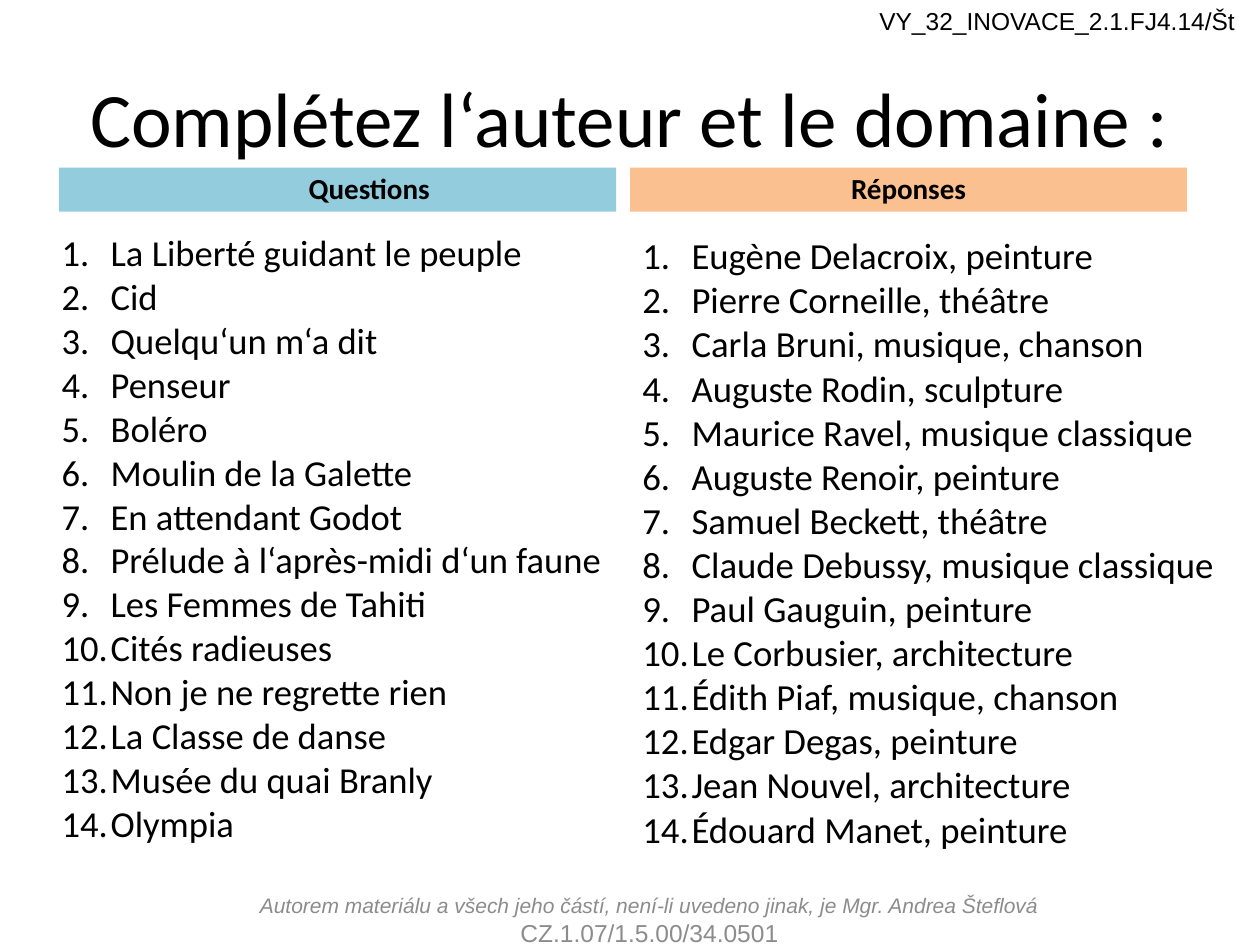
from lxml import etree
from pptx import Presentation, util as u
from pptx.dml.color import RGBColor
from pptx.enum import shapes, text
from pptx.oxml.ns import qn

BLACK = RGBColor(0x00, 0x00, 0x00)
GREY = RGBColor(0x8C, 0x8C, 0x8C)
BLUE = RGBColor(0x93, 0xCD, 0xDD)
ORANGE = RGBColor(0xFA, 0xC0, 0x90)
CENTER, LEFT = text.PP_ALIGN.CENTER, text.PP_ALIGN.LEFT
TOP, MIDDLE, BOTTOM = (text.MSO_ANCHOR.TOP, text.MSO_ANCHOR.MIDDLE,
                       text.MSO_ANCHOR.BOTTOM)

QUESTIONS = [
    "La Liberté guidant le peuple", "Cid", "Quelqu‘un m‘a dit", "Penseur",
    "Boléro", "Moulin de la Galette", "En attendant Godot",
    "Prélude à l‘après-midi d‘un faune", "Les Femmes de Tahiti",
    "Cités radieuses", "Non je ne regrette rien", "La Classe de danse",
    "Musée du quai Branly", "Olympia",
]
ANSWERS = [
    "Eugène Delacroix, peinture", "Pierre Corneille, théâtre",
    "Carla Bruni, musique, chanson", "Auguste Rodin, sculpture",
    "Maurice Ravel, musique classique", "Auguste Renoir, peinture",
    "Samuel Beckett, théâtre", "Claude Debussy, musique classique",
    "Paul Gauguin, peinture", "Le Corbusier, architecture",
    "Édith Piaf, musique, chanson", "Edgar Degas, peinture",
    "Jean Nouvel, architecture", "Édouard Manet, peinture",
]


class Worksheet:
    """Style and current slide; lengths are cells of a 100 by 75 grid."""
    columns, rows = 100, 75
    heading_font, note_font = "Calibri", "Arial"

    def __init__(self, deck):
        self.cell_w = deck.slide_width / self.columns
        self.cell_h = deck.slide_height / self.rows
        self.slide = deck.slides.add_slide(deck.slide_layouts[6])

    def place(self, left, top, width, height):
        return (round(left * self.cell_w), round(top * self.cell_h),
                round(width * self.cell_w), round(height * self.cell_h))

    def fill_text(self, frame, lines, size, font, color=BLACK, align=LEFT,
                  anchor=TOP):
        frame.word_wrap = True
        frame.vertical_anchor = anchor
        for i, line in enumerate(lines):
            paragraph = frame.paragraphs[0] if i == 0 else frame.add_paragraph()
            paragraph.text = line
            paragraph.alignment = align
            paragraph.font.size = u.Pt(size)
            paragraph.font.name = font
            paragraph.font.color.rgb = color
        return frame.paragraphs

    def label(self, area, lines, size, font, **style):
        box = self.slide.shapes.add_textbox(*self.place(*area))
        return self.fill_text(box.text_frame, lines, size, font, **style)

    def band(self, area, caption, fill, indent=(0, 0)):
        bar = self.slide.shapes.add_shape(shapes.MSO_SHAPE.RECTANGLE,
                                          *self.place(*area))
        bar.shadow.inherit = False
        bar.fill.solid()
        bar.fill.fore_color.rgb = fill
        bar.line.fill.background()
        heading, = self.fill_text(bar.text_frame, [caption], 16.6,
                                  self.heading_font, align=CENTER, anchor=BOTTOM)
        heading.font.bold = True
        self.indent(heading, *indent)

    def indent(self, paragraph, margin, first):
        properties = paragraph._p.get_or_add_pPr()
        properties.set("marL", str(round(margin * self.cell_w)))
        properties.set("indent", str(round(first * self.cell_w)))
        return properties

    def numbered(self, area, items, size, pitch):
        for item in self.label(area, items, size, self.heading_font):
            item.line_spacing = u.Pt(pitch)
            properties = self.indent(item, 3.9, -3.9)
            number = etree.Element(qn("a:buAutoNum"), type="arabicPeriod")
            properties.insert_element_before(number, "a:tabLst", "a:defRPr")


def main():
    deck = Presentation()
    deck.slide_width, deck.slide_height = u.Inches(10), u.Inches(7.5)
    sheet = Worksheet(deck)

    # Title
    sheet.label((5, 3, 90, 12.5), ["Complétez l‘auteur et le domaine :"], 44,
                sheet.heading_font, align=CENTER, anchor=MIDDLE)

    # Questions and answers
    sheet.band((4.7, 13.3, 44.2, 3.5), "Questions", BLUE, indent=(7.9, -2.9))
    sheet.numbered((3.9, 17.8, 45.7, 52.3), QUESTIONS, 20.9, 25.06)
    sheet.band((50, 13.3, 44.2, 3.5), "Réponses", ORANGE)
    sheet.numbered((50, 18, 47.7, 52.3), ANSWERS, 21, 25.2)

    # Footer
    author, project = sheet.label(
        (19.5, 71, 64.1, 4),
        ["Autorem materiálu a všech jeho částí, není-li uvedeno jinak, "
         "je Mgr. Andrea Šteflová", "CZ.1.07/1.5.00/34.0501"],
        12, sheet.note_font, color=GREY, align=CENTER, anchor=MIDDLE)
    author.font.italic = True
    project.font.size = u.Pt(14)

    # Material code
    sheet.label((68.8, 0, 31.2, 3.4), ["VY_32_INOVACE_2.1.FJ4.14/Št"], 14,
                sheet.note_font)

    deck.save("out.pptx")


if __name__ == "__main__":
    main()
